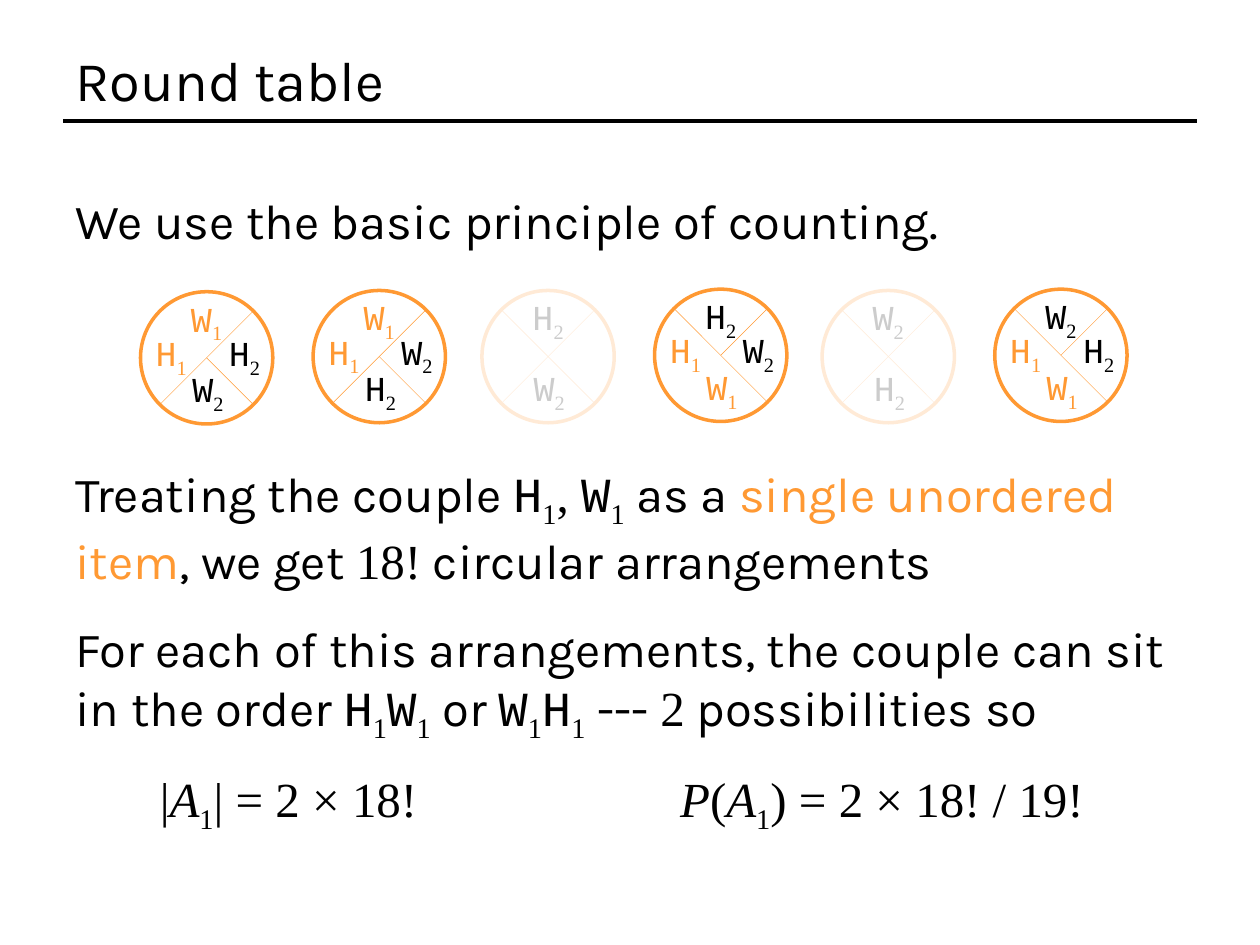
from dataclasses import dataclass
from typing import NamedTuple

from lxml import etree
from pptx import Presentation
from pptx.dml.color import RGBColor
from pptx.enum.shapes import MSO_CONNECTOR, MSO_SHAPE
from pptx.enum.text import MSO_ANCHOR, MSO_AUTO_SIZE, PP_ALIGN
from pptx.oxml.ns import qn
from pptx.util import Inches, Pt

STRAIGHT = MSO_CONNECTOR.STRAIGHT
OVAL = MSO_SHAPE.OVAL
RECTANGLE = MSO_SHAPE.RECTANGLE
MIDDLE = MSO_ANCHOR.MIDDLE
FIT_SHAPE = MSO_AUTO_SIZE.SHAPE_TO_FIT_TEXT
LEFT = PP_ALIGN.LEFT
CENTER = PP_ALIGN.CENTER


@dataclass(frozen=True)
class Theme:
    ink: RGBColor = RGBColor(0x00, 0x00, 0x00)
    accent: RGBColor = RGBColor(0xFF, 0x99, 0x33)
    paper: RGBColor = RGBColor(0xFF, 0xFF, 0xFF)
    prose: str = "Karla"
    person: str = "Courier New"
    formula: str = "Times New Roman"
    title_size: int = 32
    body_size: int = 28
    label_size: int = 20
    rim_width: float = 2
    cut_width: float = 0.25
    veil_opacity: int = 80000
    subscript: int = -25000


THEME = Theme()


class Piece(NamedTuple):
    text: str
    font: str = THEME.prose
    color: RGBColor = THEME.ink
    italic: bool = False
    subscript: bool = False


class Area(NamedTuple):
    left: float
    top: float
    width: float
    height: float


class Point(NamedTuple):
    x: float
    y: float


class RoundTable(NamedTuple):
    center: Point
    seats: tuple[str, str, str, str]
    cuts: tuple[str, ...]
    faded: bool = False


DIAMETER = 1.05
CUT_REACH = 0.37
LABEL_WIDTH, LABEL_HEIGHT = 0.46, 0.44
SEAT_OFFSETS = (Point(0, -0.31), Point(0.3, -0.04), Point(0.01, 0.25), Point(-0.28, -0.04))
VEIL_WIDTH, VEIL_HEIGHT = 1.22, 1.17
CUT_ENDS = {
    "rising": (Point(1, -1), Point(-1, 1)),
    "falling": (Point(-1, -1), Point(1, 1)),
    "lower right": (Point(0, 0), Point(1, 1)),
    "upper right": (Point(1, -1), Point(0, 0)),
}
COUPLE_LEFT_TOP = ("rising", "lower right")
COUPLE_LEFT_BOTTOM = ("falling", "upper right")
COUPLE_APART = ("rising", "falling")

TABLES = (
    RoundTable(Point(1.64, 2.84), ("W1", "H2", "W2", "H1"), COUPLE_LEFT_TOP),
    RoundTable(Point(3.01, 2.83), ("W1", "W2", "H2", "H1"), COUPLE_LEFT_TOP),
    RoundTable(Point(4.35, 2.83), ("H2", "", "W2", ""), COUPLE_APART, True),
    RoundTable(Point(5.72, 2.82), ("H2", "W2", "W1", "H1"), COUPLE_LEFT_BOTTOM),
    RoundTable(Point(7.05, 2.83), ("W2", "", "H2", ""), COUPLE_APART, True),
    RoundTable(Point(8.42, 2.82), ("W2", "H2", "W1", "H1"), COUPLE_LEFT_BOTTOM),
)


def math(text: str, italic: bool = False) -> Piece:
    return Piece(text, THEME.formula, italic=italic)


def person(name: str, color: RGBColor = THEME.ink) -> list[Piece]:
    return [
        Piece(name[0], THEME.person, color),
        Piece(name[1:], THEME.formula, color, subscript=True),
    ]


EVENT = [math("A", italic=True), Piece("1", THEME.formula, subscript=True)]

STATEMENTS = (
    (Area(0.5, 1.46, 9, 0.57), True, [Piece("We use the basic principle of counting.")]),
    (Area(0.5, 3.63, 9, 1.04), True, [
        Piece("Treating the couple "), *person("H1"), math(", "), *person("W1"),
        Piece(" as a "), Piece("single unordered item", color=THEME.accent),
        Piece(", we get "), math("18!"), Piece(" circular arrangements"),
    ]),
    (Area(0.5, 4.86, 9, 1.04), True, [
        Piece("For each of this arrangements, the couple can sit in the order "),
        *person("H1"), *person("W1"), Piece(" or "), *person("W1"), *person("H1"),
        math(" "), Piece("--- "), math("2"), Piece(" possibilities so"),
    ]),
    (Area(1.17, 6.05, 2.57, 0.57), False, [math("|"), *EVENT, math("| = 2 × 18!")]),
    (Area(5.3, 6.05, 3.5, 0.57), False,
     [math("P", italic=True), math("("), *EVENT, math(") = 2 × 18! / 19!")]),
)


def centered_area(center: Point, width: float, height: float) -> Area:
    return Area(center.x - width / 2, center.y - height / 2, width, height)


def add_text(shapes, area: Area, pieces: list[Piece], size: int, wrap: bool, align=LEFT) -> None:
    frame = shapes.add_textbox(*map(Inches, area)).text_frame
    frame.word_wrap = wrap
    frame.auto_size = FIT_SHAPE
    para = frame.paragraphs[0]
    para.alignment = align
    for piece in pieces:
        span = para.add_run()
        span.text = piece.text
        span.font.name = piece.font
        span.font.size = Pt(size)
        span.font.color.rgb = piece.color
        span.font.italic = piece.italic
        if piece.subscript:
            span.font._element.set("baseline", str(THEME.subscript))


def add_line(shapes, start: Point, end: Point, color: RGBColor, width: float) -> None:
    line = shapes.add_connector(STRAIGHT, *map(Inches, (*start, *end)))
    line.line.color.rgb = color
    line.line.width = Pt(width)
    etree.SubElement(line._element.spPr, qn("a:effectLst"))


def add_round_table(slide, table: RoundTable) -> None:
    shapes = slide.shapes.add_group_shape().shapes
    center = table.center
    rim = shapes.add_shape(OVAL, *map(Inches, centered_area(center, DIAMETER, DIAMETER)))
    rim.shadow.inherit = False
    rim.fill.background()
    rim.line.color.rgb = THEME.accent
    rim.line.width = Pt(THEME.rim_width)
    for cut in table.cuts:
        start, end = (
            Point(center.x + CUT_REACH * side.x, center.y + CUT_REACH * side.y)
            for side in CUT_ENDS[cut]
        )
        add_line(shapes, start, end, THEME.accent, THEME.cut_width)
    for name, offset in zip(table.seats, SEAT_OFFSETS):
        if not name:
            continue
        color = THEME.accent if name.endswith("1") else THEME.ink
        seat = Point(center.x + offset.x, center.y + offset.y)
        area = centered_area(seat, LABEL_WIDTH, LABEL_HEIGHT)
        add_text(shapes, area, person(name, color), THEME.label_size, False, CENTER)


def add_veil(slide, center: Point) -> None:
    veil = slide.shapes.add_shape(
        RECTANGLE, *map(Inches, centered_area(center, VEIL_WIDTH, VEIL_HEIGHT)))
    veil.shadow.inherit = False
    veil.line.fill.background()
    veil.fill.solid()
    veil.fill.fore_color.rgb = THEME.paper
    color = veil._element.spPr.find(qn("a:solidFill"))[0]
    etree.SubElement(color, qn("a:alpha")).set("val", str(THEME.veil_opacity))


def format_title(title) -> None:
    title.left, title.top, title.width, title.height = map(Inches, (0.5, 0.3, 9, 0.66))
    title.text_frame.text = "Round table"
    title.text_frame.vertical_anchor = MIDDLE
    para = title.text_frame.paragraphs[0]
    para.alignment = LEFT
    font = para.runs[0].font
    font.name = THEME.prose
    font.size = Pt(THEME.title_size)
    font.color.rgb = THEME.ink


def main() -> None:
    deck = Presentation()
    deck.slide_width, deck.slide_height = Inches(10), Inches(7.5)
    slide = deck.slides.add_slide(deck.slide_layouts[5])
    format_title(slide.shapes.title)
    add_line(slide.shapes, Point(0.5, 0.96), Point(9.5, 0.96), THEME.ink, THEME.rim_width)
    for table in TABLES:
        add_round_table(slide, table)
    for area, wrap, pieces in STATEMENTS:
        add_text(slide.shapes, area, pieces, THEME.body_size, wrap)
    for table in TABLES:
        if table.faded:
            add_veil(slide, table.center)
    deck.save("out.pptx")


if __name__ == "__main__":
    main()
